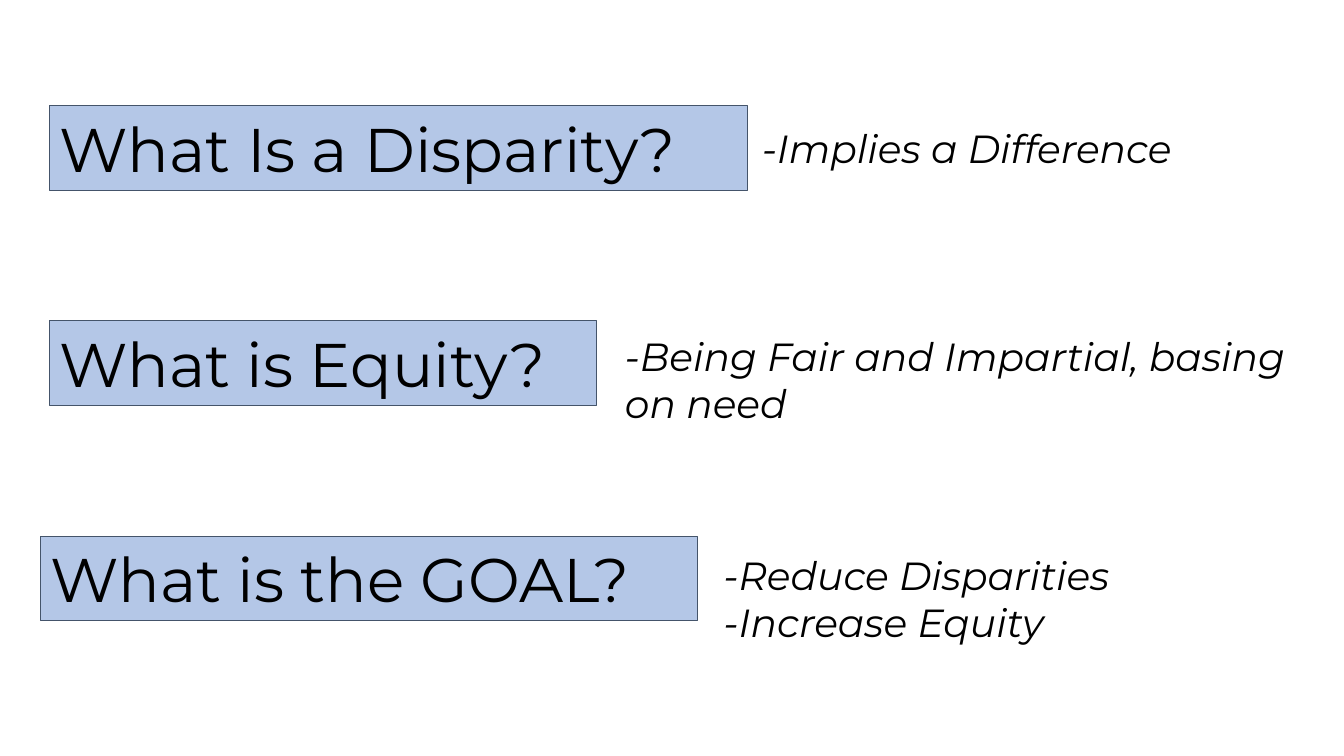
from dataclasses import dataclass

from pptx import Presentation
from pptx.dml.color import RGBColor
from pptx.enum.shapes import MSO_SHAPE
from pptx.enum.text import MSO_ANCHOR, MSO_AUTO_SIZE, PP_ALIGN
from pptx.shapes.autoshape import Shape
from pptx.slide import Slide
from pptx.util import Inches, Pt

BLUE = RGBColor(0xB4, 0xC7, 0xE7)
SLATE = RGBColor(0x44, 0x54, 0x6A)
BLACK = RGBColor(0, 0, 0)
FONT = "Montserrat"
BAR_HEIGHT = 0.84


@dataclass(frozen=True)
class Box:
    left: float
    top: float
    width: float
    height: float


@dataclass(frozen=True)
class Topic:
    title: str
    bar: Box
    answer: str
    note: Box


TOPICS = [
    Topic("What Is a Disparity?", Box(0.49, 1.05, 6.92, BAR_HEIGHT),
          "-Implies a Difference", Box(7.46, 1.18, 4.63, 0.57)),
    Topic("What is Equity?", Box(0.49, 3.18, 5.43, BAR_HEIGHT),
          "-Being Fair and Impartial, basing on need", Box(6.1, 3.25, 7.11, 1.04)),
    Topic("What is the GOAL?", Box(0.4, 5.32, 6.52, BAR_HEIGHT),
          "-Reduce Disparities\n-Increase Equity", Box(7.08, 5.42, 4.73, 1.04)),
]


def place(box: Box) -> tuple[Inches, ...]:
    return tuple(Inches(n) for n in (box.left, box.top, box.width, box.height))


def write(shape: Shape, text: str, *, size: int, italic: bool = False) -> None:
    frame = shape.text_frame
    frame.text = text
    frame.word_wrap = True
    frame.auto_size = MSO_AUTO_SIZE.SHAPE_TO_FIT_TEXT
    frame.vertical_anchor = MSO_ANCHOR.TOP
    for line in frame.paragraphs:
        line.alignment = PP_ALIGN.LEFT
        for run in line.runs:
            run.font.name = FONT
            run.font.size = Pt(size)
            run.font.italic = italic
            run.font.color.rgb = BLACK


def draw(slide: Slide, topic: Topic) -> None:
    bar = slide.shapes.add_shape(MSO_SHAPE.RECTANGLE, *place(topic.bar))
    bar.shadow.inherit = False
    bar.fill.solid()
    bar.fill.fore_color.rgb = BLUE
    bar.line.color.rgb = SLATE
    bar.line.width = Pt(0.75)
    write(bar, topic.title, size=44)
    note = slide.shapes.add_textbox(*place(topic.note))
    write(note, topic.answer, size=28, italic=True)


def main() -> None:
    deck = Presentation()
    deck.slide_width = Inches(13.33)
    deck.slide_height = Inches(7.5)
    slide = deck.slides.add_slide(deck.slide_layouts[6])
    for topic in TOPICS:
        draw(slide, topic)
    deck.save("out.pptx")


if __name__ == "__main__":
    main()
